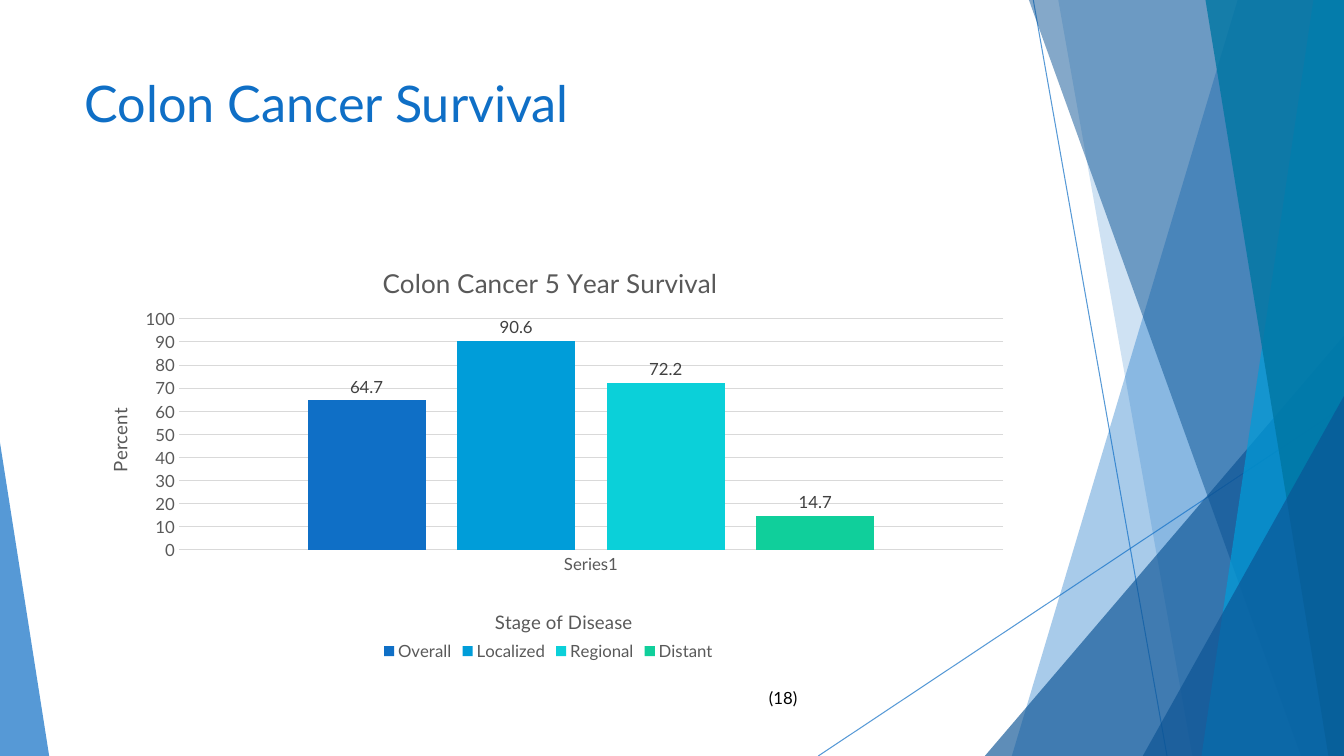
from dataclasses import dataclass

from lxml import etree
from pptx import Presentation
from pptx import util as u
from pptx.chart.data import CategoryChartData
from pptx.dml.color import RGBColor
from pptx.enum import chart as ch
from pptx.enum import shapes, text
from pptx.oxml.ns import qn

W, H = 33.87, 19.05
FONT = "Lato"
COLORS = {
    "blue": "0F6FC6", "navy": "0B5394", "sky": "009DD9", "teal": "0076A3",
    "cyan": "0BD0D9", "green": "10CF9B", "black": "000000",
    "label": "404040", "axis": "595959", "grid": "D9D9D9",
}


@dataclass
class Ray:
    x1: float
    y1: float
    x2: float
    y2: float


@dataclass
class Band:
    top: float
    bottom: float
    color: str
    alpha: int


@dataclass
class Wedge:
    left: float
    top: float
    width: float
    color: str
    alpha: int
    apex: float


@dataclass
class Stage:
    name: str
    percent: float
    color: str


RAYS = [Ray(26.04, 0, 29.41, H), Ray(W, 10.24, 20.62, H)]
FACETS = [
    Band(31.19, 25.5, "blue", 36),
    Band(26.67, 30.05, "blue", 20),
    Wedge(24.82, 8.46, 9.05, "navy", 66, 1),
    Band(25.93, 32.79, "navy", 50),
    Band(33.1, 30.28, "sky", 70),
    Band(30.38, 33.48, "teal", 80),
    Wedge(28.8, 9.98, 5.07, "navy", 66, 1),
    Wedge(0, 11.15, 1.24, "blue", 70, 0),
]
STAGES = [
    Stage("Overall", 64.7, "blue"),
    Stage("Localized", 90.6, "sky"),
    Stage("Regional", 72.2, "cyan"),
    Stage("Distant", 14.7, "green"),
]


def rgb(name: str) -> RGBColor:
    return RGBColor.from_string(COLORS[name])


def paint(fill, color: str, alpha: int = 100) -> None:
    fill.solid()
    fill.fore_color.rgb = rgb(color)
    if alpha < 100:
        clr = next(fill._xPr.iter(qn("a:srgbClr")))
        etree.SubElement(clr, qn("a:alpha"), val=str(alpha * 1000))


def style(font, size: float, color: str) -> None:
    font.name, font.size, font.bold = FONT, u.Pt(size), False
    font.color.rgb = rgb(color)


def write(tf, content: str, *, size: float, color: str) -> None:
    p = tf.paragraphs[0]
    r = p.add_run()
    r.text = content
    style(r.font, size, color)


def draw_ray(slide, ray: Ray) -> None:
    ends = (u.Cm(v) for v in (ray.x1, ray.y1, ray.x2, ray.y2))
    line = slide.shapes.add_connector(shapes.MSO_CONNECTOR.STRAIGHT, *ends)
    line.line.width = u.Pt(0.75)
    paint(line.line.fill, "blue", 70)
    etree.SubElement(line._element.spPr, qn("a:effectLst"))


def draw_facet(slide, facet: Band | Wedge) -> None:
    if isinstance(facet, Band):
        builder = slide.shapes.build_freeform(u.Cm(facet.top), 0)
        corners = [(W, 0), (W, H), (facet.bottom, H)]
        builder.add_line_segments([(u.Cm(x), u.Cm(y)) for x, y in corners])
        sp = builder.convert_to_shape()
    else:
        box = (facet.left, facet.top, facet.width, H - facet.top)
        sp = slide.shapes.add_shape(shapes.MSO_SHAPE.ISOSCELES_TRIANGLE, *map(u.Cm, box))
        sp.adjustments[0] = facet.apex
    paint(sp.fill, facet.color, facet.alpha)
    sp.line.fill.background()
    sp.shadow.inherit = False


def arrange(element, index: int, **fractions: float) -> None:
    for old in element.findall(qn("c:layout")):
        element.remove(old)
    layout = etree.Element(qn("c:layout"))
    element.insert(index, layout)
    manual = etree.SubElement(layout, qn("c:manualLayout"))
    if "w" in fractions:
        etree.SubElement(manual, qn("c:layoutTarget"), val="inner")
    for mode in ("xMode", "yMode"):
        etree.SubElement(manual, qn(f"c:{mode}"), val="edge")
    for key, value in fractions.items():
        etree.SubElement(manual, qn(f"c:{key}"), val=str(value))


def add_caption(title, content: str, size: float, x: float, y: float) -> None:
    write(title.text_frame, content, size=size, color="axis")
    arrange(title._element, 1, x=x, y=y)


def add_survival_chart(slide) -> None:
    data = CategoryChartData()
    data.categories = ["Series1"]
    for stage in STAGES:
        data.add_series(stage.name, [stage.percent])
    box = map(u.Cm, (1.88, 5.99, 23.88, 10.77))
    chart = slide.shapes.add_chart(ch.XL_CHART_TYPE.COLUMN_CLUSTERED, *box, data).chart
    style(chart.font, 10, "black")

    add_caption(chart.chart_title, "Colon Cancer 5 Year Survival", 18.6, 0.32, 0.05)
    add_caption(chart.category_axis.axis_title, "Stage of Disease", 13.3, 0.44, 0.86)
    add_caption(chart.value_axis.axis_title, "Percent", 13.3, 0.03, 0.39)
    body = chart.value_axis.axis_title.text_frame._txBody.bodyPr
    body.set("rot", "-5400000")
    body.set("vert", "horz")
    arrange(chart._chartSpace.chart.plotArea, 0, x=0.11, y=0.19, w=0.87, h=0.54)

    for axis in (chart.category_axis, chart.value_axis):
        axis.major_tick_mark = axis.minor_tick_mark = ch.XL_TICK_MARK.NONE
        style(axis.tick_labels.font, 12, "axis")
    chart.value_axis.minimum_scale = 0
    chart.value_axis.maximum_scale = 100
    chart.value_axis.major_unit = 10
    chart.value_axis.format.line.fill.background()
    for line in (chart.category_axis.format.line,
                 chart.value_axis.major_gridlines.format.line):
        line.width = u.Pt(0.75)
        paint(line.fill, "grid")

    chart.has_legend = True
    chart.legend.position = ch.XL_LEGEND_POSITION.BOTTOM
    chart.legend.include_in_layout = False
    style(chart.legend.font, 12, "axis")

    plot = chart.plots[0]
    plot.gap_width, plot.overlap, plot.vary_by_categories = 219, -27, False
    for stage, series in zip(STAGES, plot.series):
        paint(series.format.fill, stage.color)
        labels = series.data_labels
        labels.show_value = True
        labels.position = ch.XL_LABEL_POSITION.OUTSIDE_END
        style(labels.font, 12, "label")


def main() -> None:
    prs = Presentation()
    prs.slide_width, prs.slide_height = u.Cm(W), u.Cm(H)
    slide = prs.slides.add_slide(prs.slide_layouts[5])

    for ray in RAYS:
        draw_ray(slide, ray)
    for facet in FACETS:
        draw_facet(slide, facet)

    title = slide.shapes.title
    title.left, title.top, title.width, title.height = map(u.Cm, (1.88, 1.7, 23.88, 3.66))
    title.text_frame.vertical_anchor = text.MSO_ANCHOR.TOP
    write(title.text_frame, "Colon Cancer Survival", size=36, color="blue")
    title.text_frame.paragraphs[0].alignment = text.PP_ALIGN.LEFT

    add_survival_chart(slide)

    citation = slide.shapes.add_textbox(*map(u.Cm, (19.13, 17.2, 1.57, 0.76)))
    citation.text_frame.word_wrap = True
    write(citation.text_frame, "(18)", size=12, color="black")

    prs.save("out.pptx")


if __name__ == "__main__":
    main()
